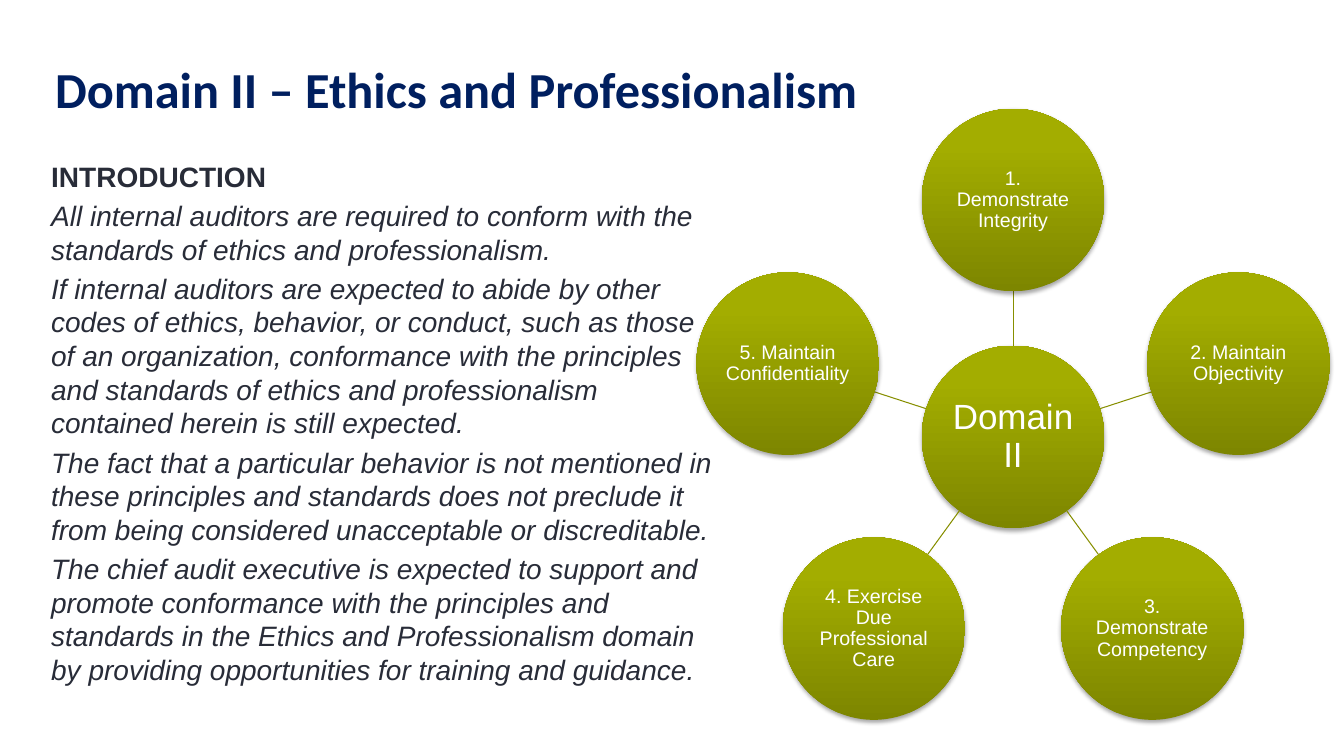
"""Build the Domain II slide: introduction text beside a radial diagram of five principles."""
from copy import deepcopy
from dataclasses import dataclass
from math import cos, radians, sin

from pptx import Presentation
from pptx.dml.color import RGBColor
from pptx.enum.shapes import MSO_CONNECTOR as Link, MSO_SHAPE as Preset
from pptx.enum.text import MSO_ANCHOR as Anchor, PP_ALIGN as Align
from pptx.oxml import parse_xml
from pptx.oxml.ns import nsdecls, qn
from pptx.shapes.shapetree import SlideShapes
from pptx.text.text import TextFrame
from pptx.util import Cm, Pt

COLORS = {
    "title": "001F5F",
    "body": "282C38",
    "label": "FFFFFF",
    "spoke": "878F00",
    "dark": "7D8600",
    "olive": "A3AD00",
    "light": "A4AE00",
}
GRADIENT = [(0, "dark"), (0.8, "olive"), (1, "light")]
HUB_X, HUB_Y = 25.53, 11.01
RING = 5.97
RADIUS = 2.3
HEADING = "INTRODUCTION"
STATEMENTS = [
    "All internal auditors are required to conform with the standards of ethics "
    "and professionalism.",
    "If internal auditors are expected to abide by other codes of ethics, behavior, "
    "or conduct, such as those of an organization, conformance with the principles "
    "and standards of ethics and professionalism contained herein is still expected.",
    "The fact that a particular behavior is not mentioned in these principles and "
    "standards does not preclude it from being considered unacceptable or discreditable.",
    "The chief audit executive is expected to support and promote conformance with the "
    "principles and standards in the Ethics and Professionalism domain by providing "
    "opportunities for training and guidance.",
]
PRINCIPLES = [
    "1. Demonstrate Integrity",
    "2. Maintain Objectivity",
    "3. Demonstrate Competency",
    "4. Exercise Due Professional Care",
    "5. Maintain Confidentiality",
]


@dataclass
class Circle:
    """A labelled circle, placed by its angle and distance from the hub."""

    label: str
    size: float
    angle: float = 0
    distance: float = 0


def color(name: str) -> RGBColor:
    """Look up a named colour."""
    return RGBColor.from_string(COLORS[name])


def point(angle: float, distance: float) -> tuple[float, float]:
    """Give the centimetre position at a clockwise angle from the top of the hub."""
    turn = radians(angle)
    return HUB_X + distance * sin(turn), HUB_Y - distance * cos(turn)


def draw_circle(shapes: SlideShapes, circle: Circle) -> None:
    """Draw one shaded circle with its centred label."""
    x, y = point(circle.angle, circle.distance)
    disc = shapes.add_shape(
        Preset.OVAL, Cm(x - RADIUS), Cm(y - RADIUS), Cm(2 * RADIUS), Cm(2 * RADIUS)
    )
    disc.line.fill.background()
    disc.fill.gradient()
    disc.fill.gradient_angle = 90
    properties = disc._element.spPr
    stop_list = properties.find(qn("a:gradFill")).find(qn("a:gsLst"))
    stop_list.append(deepcopy(stop_list[-1]))
    for stop, (position, name) in zip(disc.fill.gradient_stops, GRADIENT):
        stop.position = position
        stop.color.rgb = color(name)
    disc.shadow.inherit = False
    properties.find(qn("a:effectLst")).append(parse_xml(
        f'<a:outerShdw {nsdecls("a")} blurRad="40000" dist="23000" dir="5400000" '
        'rotWithShape="0"><a:srgbClr val="000000"><a:alpha val="35000"/>'
        "</a:srgbClr></a:outerShdw>"
    ))
    frame = disc.text_frame
    frame.word_wrap = True
    frame.vertical_anchor = Anchor.MIDDLE
    frame.margin_left = frame.margin_right = Cm(0.03)
    frame.margin_top = frame.margin_bottom = Cm(0.03)
    label = frame.paragraphs[0]
    label.text = circle.label
    label.alignment = Align.CENTER
    label.line_spacing = 0.9
    label.font.name = "Arial"
    label.font.size = Pt(circle.size)
    label.font.color.rgb = color("label")


def draw_spoke(shapes: SlideShapes, angle: float) -> None:
    """Join the hub's edge to the edge of the circle at an angle."""
    ends = point(angle, RADIUS) + point(angle, RING - RADIUS)
    spoke = shapes.add_connector(Link.STRAIGHT, *map(Cm, ends))
    spoke.line.color.rgb = color("spoke")
    spoke.line.width = Pt(0.75)
    spoke._element.spPr.append(parse_xml(f'<a:effectLst {nsdecls("a")}/>'))


def add_text(shapes: SlideShapes, left: float, top: float, width: float,
             height: float) -> TextFrame:
    """Add a wrapping text box and return its frame."""
    frame = shapes.add_textbox(Cm(left), Cm(top), Cm(width), Cm(height)).text_frame
    frame.word_wrap = True
    return frame


def write_title(shapes: SlideShapes) -> None:
    """Write the slide title."""
    title = add_text(shapes, 1.14, 1.35, 27.79, 3.35).paragraphs[0]
    title.text = "Domain II – Ethics and Professionalism"
    title.font.name = "Calibri"
    title.font.size = Pt(36)
    title.font.bold = True
    title.font.color.rgb = color("title")


def write_introduction(shapes: SlideShapes) -> None:
    """Write the bold heading and the italic statements."""
    frame = add_text(shapes, 1.04, 3.89, 17.25, 13.79)
    for index, text in enumerate([HEADING, *STATEMENTS]):
        paragraph = frame.add_paragraph() if index else frame.paragraphs[0]
        paragraph.text = text
        if index:
            paragraph.space_before = Pt(4)
        paragraph.font.name = "Arial"
        paragraph.font.size = Pt(20)
        paragraph.font.bold = index == 0
        paragraph.font.italic = index > 0
        paragraph.font.color.rgb = color("body")


def main() -> None:
    """Build and save the slide."""
    deck = Presentation()
    deck.slide_width, deck.slide_height = Cm(33.87), Cm(19.05)
    shapes = deck.slides.add_slide(deck.slide_layouts[6]).shapes
    write_title(shapes)
    draw_circle(shapes, Circle("Domain II", 25))
    for index, principle in enumerate(PRINCIPLES):
        angle = index * 360 / len(PRINCIPLES)
        draw_spoke(shapes, angle)
        draw_circle(shapes, Circle(principle, 14, angle, RING))
    write_introduction(shapes)
    deck.save("out.pptx")


if __name__ == "__main__":
    main()
